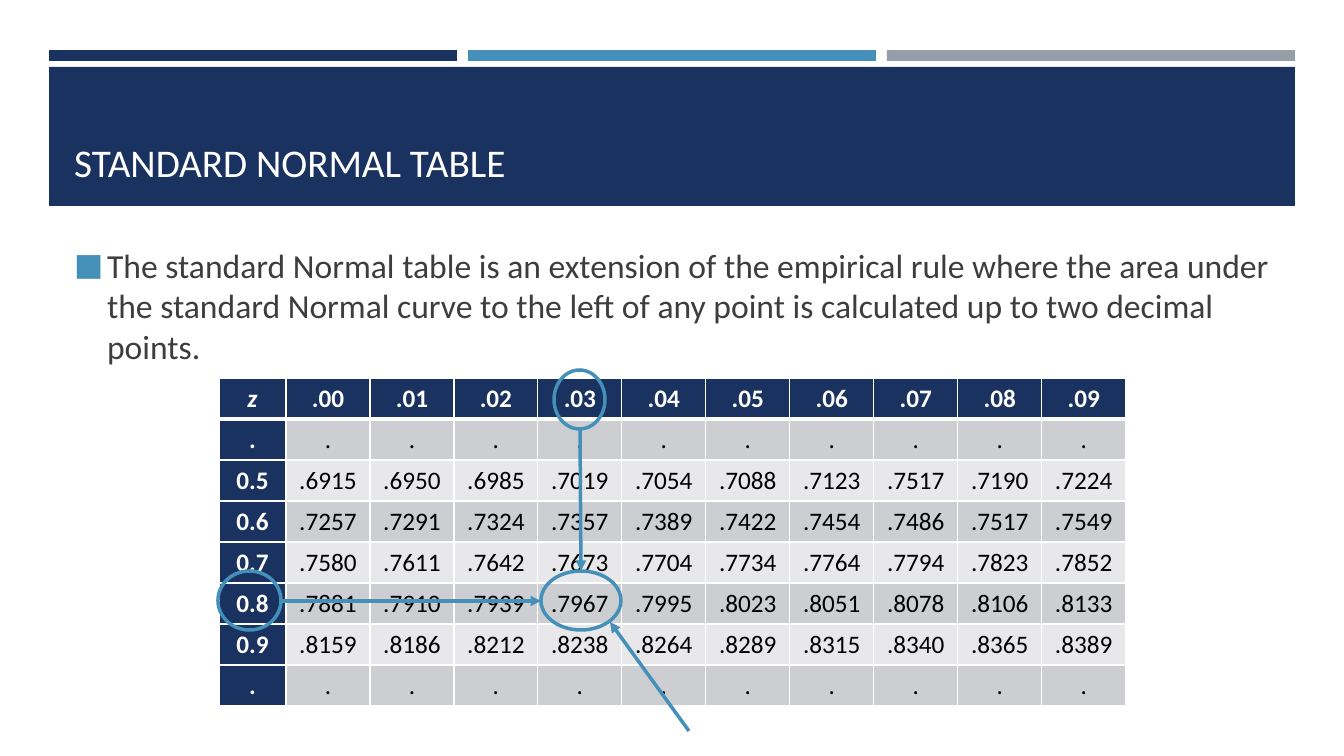
from typing import NamedTuple

from lxml.etree import SubElement
from pptx import Presentation
from pptx.dml.color import RGBColor
from pptx.enum.shapes import MSO_CONNECTOR, MSO_SHAPE
from pptx.enum.text import MSO_ANCHOR, MSO_AUTO_SIZE, PP_ALIGN
from pptx.oxml.ns import qn
from pptx.util import Emu, Pt

EMU_PER_PX = 12192000 / 1344
FONT = "Calibri"
COLOURS = {
    "navy": "1A3260",
    "blue": "4590B8",
    "grey": "969FA7",
    "white": "FFFFFF",
    "black": "000000",
    "text": "3D3D3D",
    "dark_band": "CDCED2",
    "light_band": "E8E8EA",
}

TITLE = "STANDARD NORMAL TABLE"
BODY = (
    "The standard Normal table is an extension of the empirical rule where the area "
    "under the standard Normal curve to the left of any point is calculated up to "
    "two decimal points."
)
DOTS = ["."] * 11
ROWS = [
    ["z"] + [f".0{digit}" for digit in range(10)],
    DOTS,
    "0.5 .6915 .6950 .6985 .7019 .7054 .7088 .7123 .7517 .7190 .7224".split(),
    "0.6 .7257 .7291 .7324 .7357 .7389 .7422 .7454 .7486 .7517 .7549".split(),
    "0.7 .7580 .7611 .7642 .7673 .7704 .7734 .7764 .7794 .7823 .7852".split(),
    "0.8 .7881 .7910 .7939 .7967 .7995 .8023 .8051 .8078 .8106 .8133".split(),
    "0.9 .8159 .8186 .8212 .8238 .8264 .8289 .8315 .8340 .8365 .8389".split(),
    DOTS,
]
TABLE_LEFT, TABLE_TOP = 219, 378
Z_WIDTH, VALUE_WIDTH, ROW_HEIGHT = 67, 84, 41


class Box(NamedTuple):
    left: int
    top: int
    width: int
    height: int


class Bar(NamedTuple):
    box: Box
    colour: str


class Arrow(NamedTuple):
    begin_x: int
    begin_y: int
    end_x: int
    end_y: int


TITLE_BOX = Box(64, 81, 1216, 109)
BODY_BOX = Box(64, 240, 1216, 405)
BARS = [
    Bar(Box(49 + 419 * index, 50, 408, 11), colour)
    for index, colour in enumerate(("navy", "blue", "grey"))
] + [Bar(Box(49, 67, 1246, 139), "navy")]
RINGS = [Box(554, 370, 51, 59), Box(218, 571, 63, 59), Box(541, 571, 80, 59)]
ARROWS = [
    Arrow(580, 429, 581, 571),
    Arrow(281, 601, 541, 601),
    Arrow(689, 731, 610, 622),
]


def px(length: int) -> Emu:
    return Emu(round(length * EMU_PER_PX))


def rgb(name: str) -> RGBColor:
    return RGBColor.from_string(COLOURS[name])


def style_font(paragraph, size: int, colour: str, bold: bool = False) -> None:
    paragraph.font.name = FONT
    paragraph.font.size = Pt(size)
    paragraph.font.bold = bold
    paragraph.font.color.rgb = rgb(colour)


def draw_bar(slide, bar: Bar) -> None:
    shape = slide.shapes.add_shape(MSO_SHAPE.RECTANGLE, *map(px, bar.box))
    shape.shadow.inherit = False
    shape.fill.solid()
    shape.fill.fore_color.rgb = rgb(bar.colour)
    shape.line.fill.background()


def draw_ring(slide, box: Box) -> None:
    shape = slide.shapes.add_shape(MSO_SHAPE.OVAL, *map(px, box))
    shape.shadow.inherit = False
    shape.fill.background()
    shape.line.color.rgb = rgb("blue")
    shape.line.width = Pt(2.5)


def draw_arrow(slide, arrow: Arrow) -> None:
    connector = slide.shapes.add_connector(MSO_CONNECTOR.STRAIGHT, *map(px, arrow))
    connector.line.color.rgb = rgb("blue")
    connector.line.width = Pt(2.5)
    SubElement(connector.line._get_or_add_ln(), qn("a:tailEnd"), type="triangle")
    SubElement(connector._element.spPr, qn("a:effectLst"))


def fill_placeholder(placeholder, box: Box, text: str, size: int, colour: str):
    placeholder.left, placeholder.top, placeholder.width, placeholder.height = map(px, box)
    placeholder.element.getparent().append(placeholder.element)
    frame = placeholder.text_frame
    frame.text = text
    frame.word_wrap = True
    frame.auto_size = MSO_AUTO_SIZE.NONE
    paragraph = frame.paragraphs[0]
    paragraph.alignment = PP_ALIGN.LEFT
    style_font(paragraph, size, colour)
    return frame


def add_square_bullet(paragraph) -> None:
    properties = paragraph._p.get_or_add_pPr()
    properties.set("marL", str(px(33)))
    properties.set("indent", str(px(-33)))
    colour = SubElement(properties, qn("a:buClr"))
    SubElement(colour, qn("a:srgbClr"), val=COLOURS["blue"])
    SubElement(properties, qn("a:buSzPct"), val="92000")
    SubElement(properties, qn("a:buFont"), typeface=FONT)
    SubElement(properties, qn("a:buChar"), char="■")
    properties.append(properties.find(qn("a:defRPr")))


def set_borders(cell, top: int, bottom: int) -> None:
    properties = cell._tc.get_or_add_tcPr()
    for side, width in {"L": 1, "R": 1, "T": top, "B": bottom}.items():
        line = SubElement(properties, qn(f"a:ln{side}"), w=str(Pt(width)))
        fill = SubElement(line, qn("a:solidFill"))
        SubElement(fill, qn("a:srgbClr"), val=COLOURS["white"])


def draw_table(slide) -> None:
    width = Z_WIDTH + VALUE_WIDTH * 10
    box = Box(TABLE_LEFT, TABLE_TOP, width, ROW_HEIGHT * len(ROWS))
    table = slide.shapes.add_table(len(ROWS), 11, *map(px, box)).table
    for index, column in enumerate(table.columns):
        column.width = px(VALUE_WIDTH if index else Z_WIDTH)
    for row_index, values in enumerate(ROWS):
        table.rows[row_index].height = px(ROW_HEIGHT)
        band = "dark_band" if row_index % 2 else "light_band"
        for column_index, value in enumerate(values):
            heading = row_index == 0 or column_index == 0
            cell = table.cell(row_index, column_index)
            cell.text = value
            cell.vertical_anchor = MSO_ANCHOR.MIDDLE
            set_borders(cell, 3 if row_index == 1 else 1, 3 if row_index == 0 else 1)
            cell.fill.solid()
            cell.fill.fore_color.rgb = rgb("navy" if heading else band)
            paragraph = cell.text_frame.paragraphs[0]
            paragraph.alignment = PP_ALIGN.CENTER
            style_font(paragraph, 18, "white" if heading else "black", heading)
            paragraph.font.italic = value == "z"


def main() -> None:
    presentation = Presentation()
    presentation.slide_width, presentation.slide_height = px(1344), px(756)
    slide = presentation.slides.add_slide(presentation.slide_layouts[1])
    for bar in BARS:
        draw_bar(slide, bar)
    body = fill_placeholder(slide.placeholders[1], BODY_BOX, BODY, 24, "text")
    body.paragraphs[0].space_after = Pt(6)
    add_square_bullet(body.paragraphs[0])
    title = fill_placeholder(slide.shapes.title, TITLE_BOX, TITLE, 28, "white")
    title.vertical_anchor = MSO_ANCHOR.BOTTOM
    draw_table(slide)
    for ring in RINGS:
        draw_ring(slide, ring)
    for arrow in ARROWS:
        draw_arrow(slide, arrow)
    presentation.save("out.pptx")


if __name__ == "__main__":
    main()
